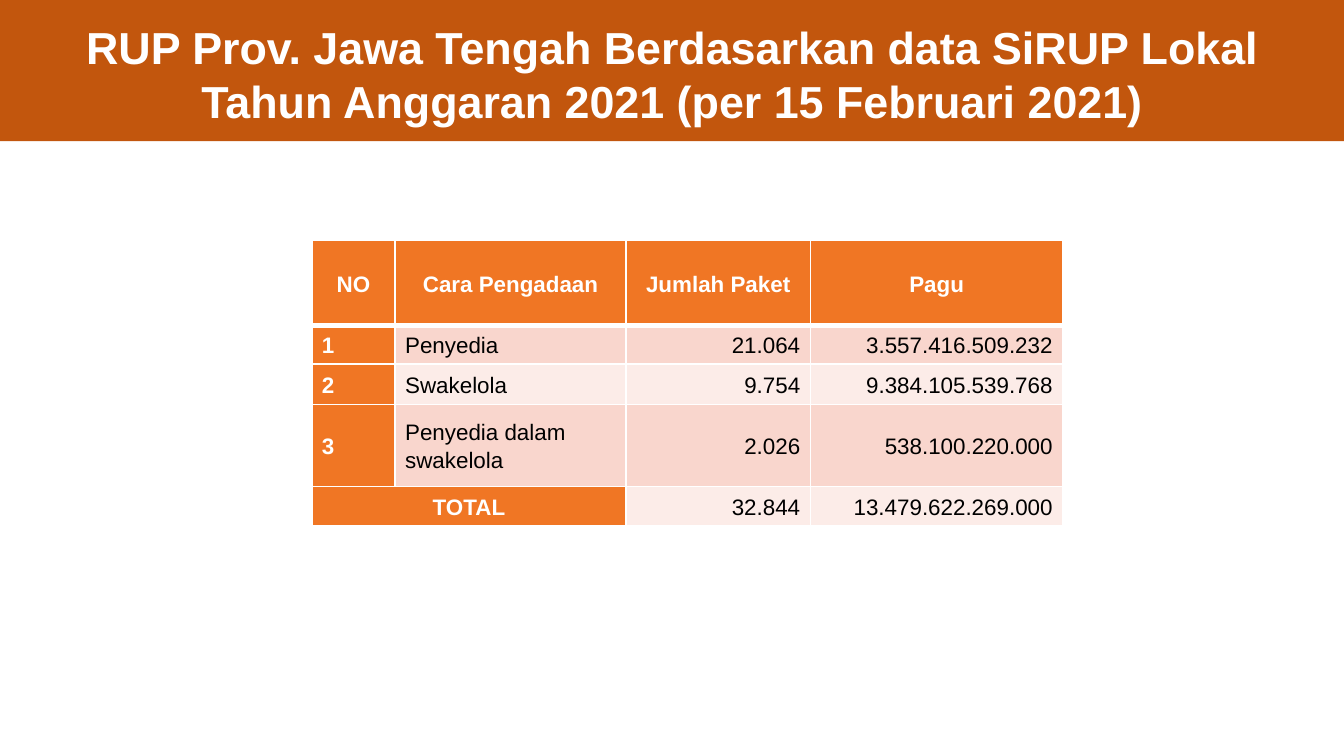
from lxml.etree import SubElement
from pptx import Presentation
from pptx.dml.color import RGBColor
from pptx.enum.shapes import MSO_SHAPE
from pptx.enum.text import MSO_ANCHOR, PP_ALIGN
from pptx.oxml import parse_xml
from pptx.oxml.ns import nsdecls, qn
from pptx.util import Inches, Pt

WHITE = RGBColor(0xFF, 0xFF, 0xFF)
BLACK = RGBColor(0x00, 0x00, 0x00)
RUST = RGBColor(0xC2, 0x56, 0x0D)
ORANGE = RGBColor(0xF0, 0x76, 0x24)
ROSE = RGBColor(0xF9, 0xD6, 0xCD)
PALE_ROSE = RGBColor(0xFC, 0xEC, 0xE8)

TITLE = ("RUP Prov. Jawa Tengah Berdasarkan data SiRUP Lokal "
         "Tahun Anggaran 2021 (per 15 Februari 2021)")
COLUMN_WIDTHS = [0.62, 1.72, 1.37, 1.88]
ROW_HEIGHTS = [0.63, 0.29, 0.3, 0.61, 0.29]
ROWS = [
    ["NO", "Cara Pengadaan", "Jumlah Paket", "Pagu"],
    ["1", "Penyedia", "21.064", "3.557.416.509.232"],
    ["2", "Swakelola", "9.754", "9.384.105.539.768"],
    ["3", "Penyedia dalam\nswakelola", "2.026", "538.100.220.000"],
    ["TOTAL", "", "32.844", "13.479.622.269.000"],
]


def style_font(font, size, color, bold):
    """Set the face, size, colour and weight of a font."""
    font.name = "Arial"
    font.size = Pt(size)
    font.bold = bold
    font.color.rgb = color


def add_title_band(slide, left, top, width, height):
    """Add the coloured band with the centred slide title."""
    band = slide.shapes.add_shape(
        MSO_SHAPE.RECTANGLE, Inches(left), Inches(top), Inches(width), Inches(height))
    band.shadow.inherit = False
    band.fill.solid()
    band.fill.fore_color.rgb = RUST
    band.line.fill.background()
    box = slide.shapes.add_textbox(
        Inches(left + 0.51), Inches(top + 0.32), Inches(width - 1.02), Inches(0.55))
    frame = box.text_frame
    frame.word_wrap = True
    frame.vertical_anchor = MSO_ANCHOR.MIDDLE
    frame.text = TITLE
    para = frame.paragraphs[0]
    para.alignment = PP_ALIGN.CENTER
    style_font(para.runs[0].font, 24, WHITE, True)


def set_borders(cell, row):
    """Draw white cell borders, thick between the header and the body."""
    widths = {"lnL": 1, "lnR": 1, "lnT": 3 if row == 1 else 1, "lnB": 3 if row == 0 else 1}
    properties = cell._tc.get_or_add_tcPr()
    for position, (side, width) in enumerate(widths.items()):
        line = parse_xml(f'<a:{side} w="{Pt(width)}" {nsdecls("a")}/>')
        fill = SubElement(line, qn("a:solidFill"))
        SubElement(fill, qn("a:srgbClr"), val=str(WHITE))
        properties.insert(position, line)


def style_cell(cell, row, column):
    """Style a cell by its place in the table."""
    is_heading = row == 0 or column == 0
    is_centered = row == 0 or (row == len(ROWS) - 1 and column == 0)
    if is_centered:
        alignment = PP_ALIGN.CENTER
    else:
        alignment = PP_ALIGN.JUSTIFY if column < 2 else PP_ALIGN.RIGHT
    cell.fill.solid()
    cell.fill.fore_color.rgb = ORANGE if is_heading else (ROSE if row % 2 else PALE_ROSE)
    cell.vertical_anchor = MSO_ANCHOR.MIDDLE
    cell.margin_left = cell.margin_right = Pt(5.4)
    cell.margin_top = cell.margin_bottom = 0
    for para in cell.text_frame.paragraphs:
        para.alignment = alignment
        para.line_spacing = 1.1
        for span in para.runs:
            style_font(span.font, 12, WHITE if is_heading else BLACK, is_heading)
    set_borders(cell, row)


def add_procurement_table(slide, left, top, width, height):
    """Add the table of packages and budget by procurement method."""
    table = slide.shapes.add_table(
        len(ROWS), len(COLUMN_WIDTHS),
        Inches(left), Inches(top), Inches(width), Inches(height)).table
    for column, column_width in zip(table.columns, COLUMN_WIDTHS):
        column.width = Inches(column_width)
    for row, row_height in zip(table.rows, ROW_HEIGHTS):
        row.height = Inches(row_height)
    for row, texts in enumerate(ROWS):
        for column, text in enumerate(texts):
            cell = table.cell(row, column)
            cell.text_frame.text = text
            style_cell(cell, row, column)
    last = len(ROWS) - 1
    table.cell(last, 0).merge(table.cell(last, 1))


def main():
    """Build and save the deck."""
    deck = Presentation()
    deck.slide_width = Inches(10)
    deck.slide_height = deck.slide_width * 9 // 16
    slide = deck.slides.add_slide(deck.slide_layouts[6])
    add_title_band(slide, 0, -0.05, 10, 1.1)
    add_procurement_table(slide, 2.32, 1.79, sum(COLUMN_WIDTHS), sum(ROW_HEIGHTS))
    deck.save("out.pptx")


if __name__ == "__main__":
    main()
